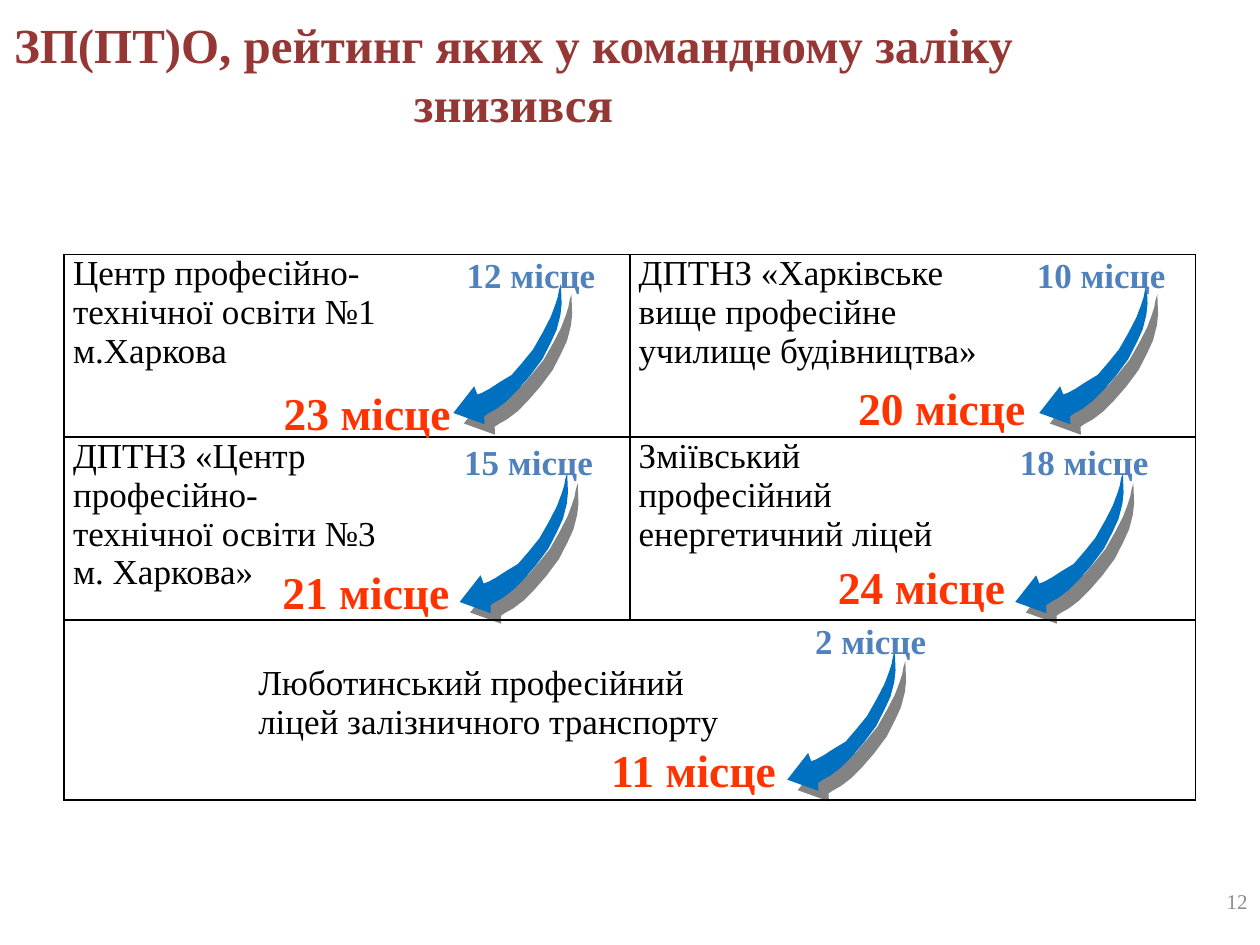
import math
from lxml import etree
from pptx import Presentation
from pptx.dml.color import RGBColor
from pptx.enum.text import MSO_ANCHOR, PP_ALIGN
from pptx.oxml import parse_xml
from pptx.oxml.ns import nsdecls, qn
from pptx.util import Inches, Pt

MIDDLE = MSO_ANCHOR.MIDDLE
LEFT, CENTER, RIGHT = PP_ALIGN.LEFT, PP_ALIGN.CENTER, PP_ALIGN.RIGHT
FONT = "Times New Roman"
SLIDE_W, SLIDE_H = Inches(10), Inches(7.5)
COLORS = {"title": "953735", "text": "000000", "old": "4F81BD", "new": "FF3300",
          "arrow": "0070C0", "shadow": "080808", "number": "8C8C8C"}

# Curved arrow as it appears, in hundredths of an inch
ARROW = [(0, 103), (17, 81), (19, 88), (23, 86), (29, 83), (37, 78), (46, 72),
         (55, 63), (63, 52), (71, 38), (77, 27), (81, 17), (83, 10), (84, 5),
         (85, 0), (86, 6), (86, 16), (85, 25), (82, 36), (78, 47), (71, 60),
         (61, 73), (51, 84), (42, 93), (34, 99), (28, 103), (24, 105), (25, 111)]
ARROW_TURN = 20.6

# School lines by table row
SCHOOLS = [
    [["Центр професійно-", "технічної освіти №1", "м.Харкова"],
     ["ДПТНЗ «Харківське", "вище професійне", "училище будівництва»"]],
    [["ДПТНЗ «Центр", "професійно-", "технічної освіти №3", "м. Харкова»"],
     ["Зміївський", "професійний", "енергетичний ліцей"]],
    [["Люботинський професійний", "ліцей залізничного транспорту"]],
]

# Old place, new place and arrow centre: (text, x, y, width), in % of the slide
CHANGES = [
    (("12 місце", 42.15, 29, 15.7), ("23 місце", 29.15, 43.67, 16.5), (40.55, 37.93)),
    (("15 місце", 41.95, 48.87, 13.9), ("21 місце", 29.05, 62.6, 16.3), (41.05, 57.93)),
    (("2 місце", 69.1, 67.8, 11.8), ("11 місце", 55.05, 81.4, 16.3), (67.05, 76.73)),
    (("10 місце", 87.4, 29, 15), ("20 місце", 74.75, 43.13, 16.5), (87.05, 37.93)),
    (("18 місце", 86.05, 48.87, 13.9), ("24 місце", 73.15, 62.07, 16.3), (85.15, 57.93)),
]


def px(percent):
    return int(SLIDE_W * percent / 100)


def py(percent):
    return int(SLIDE_H * percent / 100)


def add_run(p, text, size, color, bold=False):
    r = p.add_run()
    r.text = text
    r.font.name, r.font.size, r.font.bold = FONT, Pt(size), bold
    r.font.color.rgb = RGBColor.from_string(COLORS[color])


def add_text(slide, lines, box, size, color, bold=True, align=CENTER):
    x, y, w, h = box
    tf = slide.shapes.add_textbox(px(x), py(y), px(w), py(h)).text_frame
    tf.word_wrap = True
    tf.vertical_anchor = MIDDLE
    p = tf.paragraphs[0]
    p.alignment = align
    for i, line in enumerate(lines):
        if i:
            p.add_line_break()
        add_run(p, line, size, color, bold)


def add_place(slide, place, size, color):
    text, cx, cy, w = place
    h = 4.13
    add_text(slide, [text], (cx - w / 2, cy - h / 2, w, h), size, color)


def add_arrow(slide, cx, cy):
    # Turn the outline level, then let the shape's rotation tilt it back
    a = math.radians(ARROW_TURN)
    pts = [(x * math.cos(a) - y * math.sin(a), x * math.sin(a) + y * math.cos(a))
           for x, y in ARROW]
    fb = slide.shapes.build_freeform(*pts[0], scale=Inches(0.01))
    fb.add_line_segments(pts[1:], close=True)
    s = fb.convert_to_shape()
    s.left, s.top = px(cx) - s.width // 2, py(cy) - s.height // 2
    s.rotation = 360 - ARROW_TURN
    s.fill.solid()
    s.fill.fore_color.rgb = RGBColor.from_string(COLORS["arrow"])
    s.line.fill.background()
    s.shadow.inherit = False
    effects = s._element.spPr.find(qn("a:effectLst"))
    effects.append(parse_xml(
        f'<a:outerShdw {nsdecls("a")} dist="{Pt(8.5)}" dir="2700000" algn="ctr" '
        f'rotWithShape="0"><a:srgbClr val="{COLORS["shadow"]}">'
        '<a:alpha val="50000"/></a:srgbClr></a:outerShdw>'))


def set_borders(cell):
    tc_pr = cell._tc.get_or_add_tcPr()
    for i, side in enumerate(("lnL", "lnR", "lnT", "lnB")):
        ln = etree.Element(qn(f"a:{side}"), w=str(Pt(1)))
        fill = etree.SubElement(ln, qn("a:solidFill"))
        etree.SubElement(fill, qn("a:srgbClr"), val=COLORS["text"])
        tc_pr.insert(i, ln)


def fill_cell(cell, lines, indent=0.0):
    cell.margin_left = cell.margin_right = Inches(0.07) 
    cell.margin_left += Inches(indent)
    tf = cell.text_frame
    for i, line in enumerate(lines):
        p = tf.add_paragraph() if i else tf.paragraphs[0]
        p.alignment = LEFT
        add_run(p, line, 20, "text")


def add_school_table(slide):
    table = slide.shapes.add_table(3, 2, px(5.1), py(26.93), px(89.8), py(57.73)).table
    table.first_row = table.horz_banding = False
    for row, share in zip(table.rows, (19.33, 19.33, 19.07)):
        row.height = py(share)
    for cell in table.iter_cells():
        cell.fill.background()
        cell.margin_top = cell.margin_bottom = 0
        set_borders(cell)
    # The last school spans both columns
    last = table.cell(2, 0)
    last.merge(table.cell(2, 1))
    last.margin_top = Inches(0.35)
    for r, row in enumerate(SCHOOLS):
        for c, lines in enumerate(row):
            fill_cell(table.cell(r, c), lines, 1.47 if len(row) == 1 else 0)


def main():
    prs = Presentation()
    prs.slide_width, prs.slide_height = SLIDE_W, SLIDE_H
    slide = prs.slides.add_slide(prs.slide_layouts[6])

    # Title and slide number
    add_text(slide, ["ЗП(ПТ)О, рейтинг яких у командному заліку", "знизився"],
             (0, 1.73, 81.5, 12), 28, "title")
    add_text(slide, ["12"], (76.7, 92.67, 23.3, 5.33), 12, "number", False, RIGHT)

    # Schools with their change of place
    add_school_table(slide)
    for old, new, arrow in CHANGES:
        add_arrow(slide, *arrow)
        add_place(slide, old, 20, "old")
        add_place(slide, new, 26, "new")

    prs.save("out.pptx")


if __name__ == "__main__":
    main()
